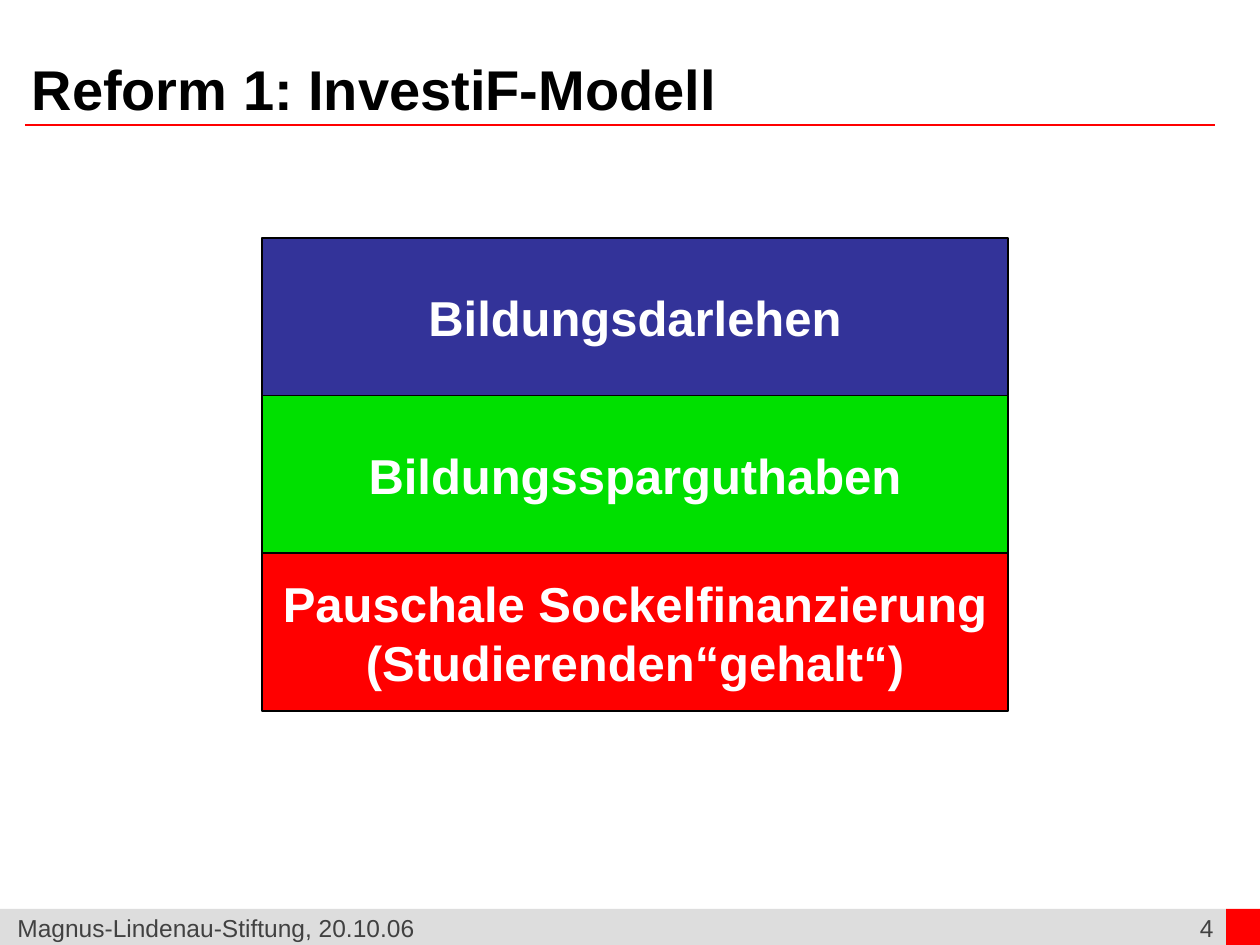
from dataclasses import dataclass

from pptx import Presentation
from pptx.dml.color import RGBColor
from pptx.enum.shapes import MSO_CONNECTOR, MSO_SHAPE
from pptx.enum.text import MSO_ANCHOR, PP_ALIGN
from pptx.oxml.ns import qn
from pptx.util import Pt
from lxml import etree

RECT, STRAIGHT = MSO_SHAPE.RECTANGLE, MSO_CONNECTOR.STRAIGHT
TOP, MIDDLE = MSO_ANCHOR.TOP, MSO_ANCHOR.MIDDLE
LEFT, CENTER, RIGHT = PP_ALIGN.LEFT, PP_ALIGN.CENTER, PP_ALIGN.RIGHT
TITLE_ONLY = 5
PX_PER_INCH = 126


@dataclass(frozen=True)
class Theme:
    font: str = "Arial"
    black: str = "000000"
    white: str = "FFFFFF"
    red: str = "FF0000"
    green: str = "00E000"
    blue: str = "333399"
    bar: str = "DDDDDD"
    footer_text: str = "414141"
    title_size: int = 32
    block_size: int = 28
    footer_size: int = 14
    line_width: int = 1


THEME = Theme()


def px(length):
    return round(length * 914400 / PX_PER_INCH)


def write(frame, lines, size, color, bold=False, align=LEFT, **frame_format):
    """Fill a text frame with one paragraph per line."""
    for attribute, value in frame_format.items():
        setattr(frame, attribute, value)
    frame.text = "\n".join(lines)
    font_format = {"name": THEME.font, "size": Pt(size), "bold": bold}
    for paragraph in frame.paragraphs:
        paragraph.alignment = align
        font = paragraph.runs[0].font
        for attribute, value in font_format.items():
            setattr(font, attribute, value)
        font.color.rgb = RGBColor.from_string(color)


def add_rect(slide, box, fill, outline=None):
    rect = slide.shapes.add_shape(RECT, *map(px, box))
    rect.shadow.inherit = False
    rect.fill.solid()
    rect.fill.fore_color.rgb = RGBColor.from_string(fill)
    if outline:
        rect.line.color.rgb = RGBColor.from_string(outline)
        rect.line.width = Pt(THEME.line_width)
    else:
        rect.line.fill.background()
    return rect


def add_heading(slide, box, text):
    """Place the title and the rule below it."""
    left, top, width, height = box
    title = slide.shapes.title
    place = {"left": left - 6, "top": top, "width": 998, "height": height - 4}
    for attribute, value in place.items():
        setattr(title, attribute, px(value))
    write(title.text_frame, [text], THEME.title_size, THEME.black, bold=True,
          vertical_anchor=TOP, word_wrap=True, margin_top=px(12),
          margin_bottom=0)
    rule_y = px(top + height)
    rule = slide.shapes.add_connector(STRAIGHT, px(left), rule_y,
                                      px(left + width), rule_y)
    rule.line.color.rgb = RGBColor.from_string(THEME.red)
    rule.line.width = Pt(THEME.line_width)
    etree.SubElement(rule.element.spPr, qn("a:effectLst"))


def add_stack(slide, box, blocks):
    """Divide the box into equal blocks, one on top of another."""
    left, top, width, height = box
    step = height / len(blocks)
    for row, (lines, fill) in enumerate(blocks):
        block = add_rect(slide, (left, top + row * step, width, step),
                         fill, THEME.black)
        write(block.text_frame, lines, THEME.block_size, THEME.white,
              bold=True, align=CENTER, vertical_anchor=MIDDLE,
              word_wrap=False)


def add_footer(slide, box, event, page):
    left, top, width, height = box
    corner = 34
    add_rect(slide, (left, top, width - corner, height), THEME.bar)
    add_rect(slide, (left + width - corner, top, corner, height), THEME.red)
    number_left = left + width - corner - 110
    texts = [(event, left + 5, number_left - left - 5, LEFT),
             (page, number_left, 110, RIGHT)]
    for text, text_left, text_width, align in texts:
        label = slide.shapes.add_textbox(
            *map(px, (text_left, top - 2, text_width, height + 2)))
        write(label.text_frame, [text], THEME.footer_size, THEME.footer_text,
              align=align, word_wrap=True)


def main():
    presentation = Presentation()
    presentation.slide_width = px(1260)
    presentation.slide_height = px(945)
    slide = presentation.slides.add_slide(
        presentation.slide_layouts[TITLE_ONLY])
    add_footer(slide, (0, 909, 1260, 36),
               "Magnus-Lindenau-Stiftung, 20.10.06", "4")
    add_heading(slide, (25, 42, 1190, 83), "Reform 1: InvestiF-Modell")
    add_stack(slide, (262, 238, 746, 473), [
        (["Bildungsdarlehen"], THEME.blue),
        (["Bildungssparguthaben"], THEME.green),
        (["Pauschale Sockelfinanzierung", "(Studierenden“gehalt“)"],
         THEME.red),
    ])
    presentation.save("out.pptx")


if __name__ == "__main__":
    main()
